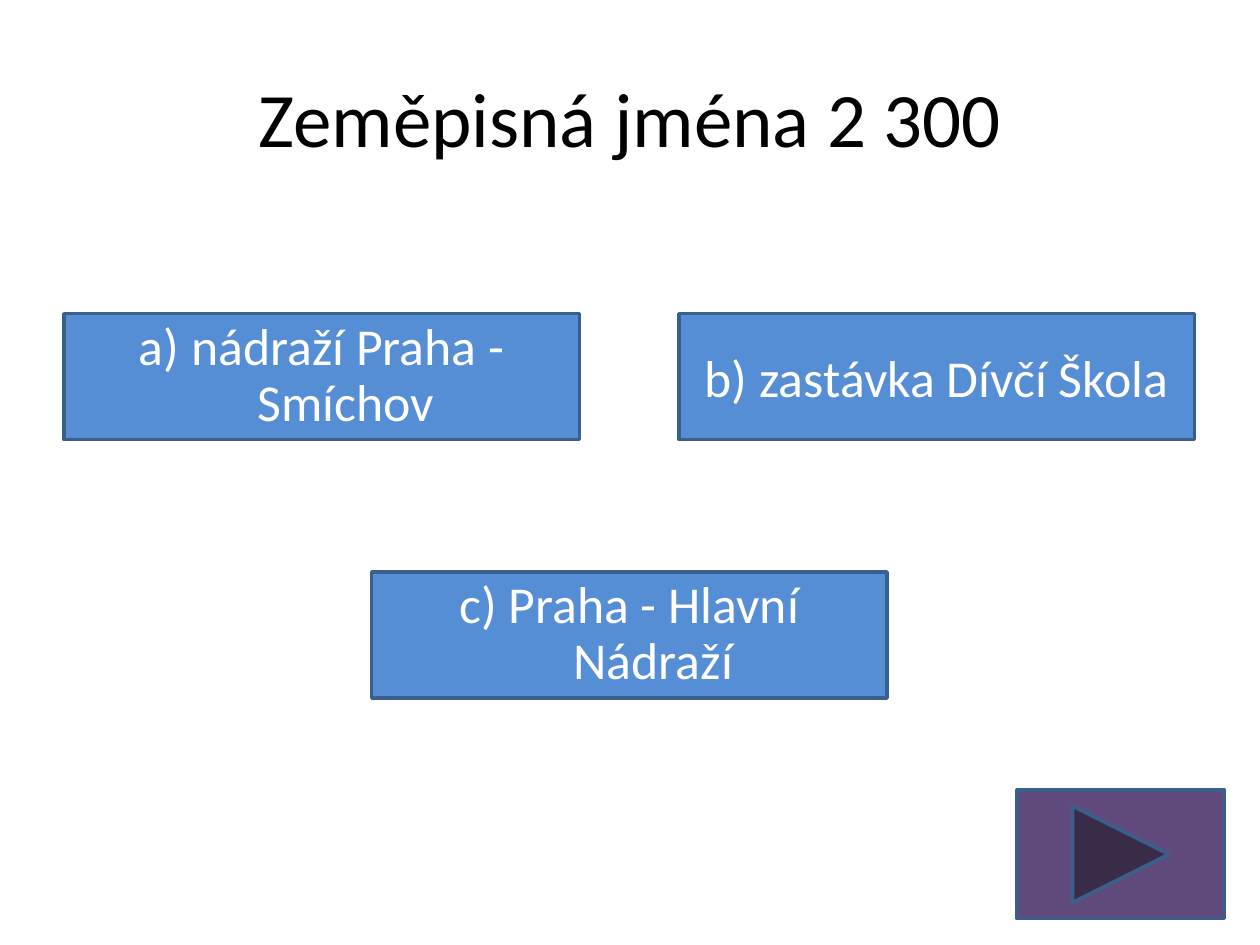
from pptx import Presentation
from pptx.dml.color import RGBColor
from pptx.enum.shapes import MSO_SHAPE
from pptx.enum.text import MSO_ANCHOR, PP_ALIGN
from pptx.util import Inches, Pt

BLANK_BUTTON = MSO_SHAPE.ACTION_BUTTON_CUSTOM
NEXT_BUTTON = MSO_SHAPE.ACTION_BUTTON_FORWARD_OR_NEXT
CENTER = PP_ALIGN.CENTER
MIDDLE = MSO_ANCHOR.MIDDLE

COLORS = {
    "title": "000000",
    "answer": "558ED5",
    "answer_text": "FFFFFF",
    "next": "604A7B",
    "outline": "3A5F8C",
}
WIDTH, HEIGHT = 10, 7.5
ANSWER_WIDTH, ANSWER_HEIGHT = 4.09, 1
LEFT_COLUMN, RIGHT_COLUMN = 0.51, 5.39
MIDDLE_COLUMN = (LEFT_COLUMN + RIGHT_COLUMN) / 2
UPPER_ROW, LOWER_ROW = 2.49, 4.54
ANSWERS = [
    ("a) nádraží Praha - Smíchov", LEFT_COLUMN, UPPER_ROW, 0.9),
    ("b) zastávka Dívčí Škola", RIGHT_COLUMN, UPPER_ROW, 1.0),
    ("c) Praha - Hlavní Nádraží", MIDDLE_COLUMN, LOWER_ROW, 0.9),
]


def write_text(shape, text, *, size, color, font="Calibri", spacing=1.0, before=0, hang=0):
    """Fill a shape with one centred, formatted paragraph."""
    frame = shape.text_frame
    frame.word_wrap = True
    frame.vertical_anchor = MIDDLE
    para = frame.paragraphs[0]
    para.alignment = CENTER
    para.line_spacing = spacing
    para.space_before = Pt(before)
    if hang:
        properties = para._p.get_or_add_pPr()
        properties.set("marL", str(Inches(hang)))
        properties.set("indent", str(-Inches(hang)))
    span = para.add_run()
    span.text = text
    span.font.name = font
    span.font.size = Pt(size)
    span.font.color.rgb = RGBColor.from_string(color)


class QuizPage:
    """Hold the quiz style and the current slide."""

    def __init__(self, deck):
        self.page = deck.slides.add_slide(deck.slide_layouts[5])

    def title(self, text, left, top, width, height):
        box = self.page.shapes.title
        box.left, box.top = Inches(left), Inches(top)
        box.width, box.height = Inches(width), Inches(height)
        write_text(box, text, size=44, color=COLORS["title"])

    def button(self, kind, left, top, width, height, fill):
        box = self.page.shapes.add_shape(
            kind, Inches(left), Inches(top), Inches(width), Inches(height)
        )
        box.shadow.inherit = False
        box.fill.solid()
        box.fill.fore_color.rgb = RGBColor.from_string(fill)
        box.line.color.rgb = RGBColor.from_string(COLORS["outline"])
        box.line.width = Pt(2)
        return box

    def answer(self, text, left, top, spacing):
        box = self.button(
            BLANK_BUTTON, left, top, ANSWER_WIDTH, ANSWER_HEIGHT, COLORS["answer"]
        )
        write_text(box, text, size=29.6, color=COLORS["answer_text"],
                   spacing=spacing, before=6, hang=0.38)


def main():
    deck = Presentation()
    deck.slide_width, deck.slide_height = Inches(WIDTH), Inches(HEIGHT)
    quiz = QuizPage(deck)
    quiz.title("Zeměpisná jména 2 300", 0.05 * WIDTH, 0.04 * HEIGHT, 0.9 * WIDTH, HEIGHT / 6)
    for answer in ANSWERS:
        quiz.answer(*answer)
    quiz.button(NEXT_BUTTON, 8.07, 6.27, 1.65, 1.02, COLORS["next"])
    deck.save("out.pptx")


if __name__ == "__main__":
    main()
